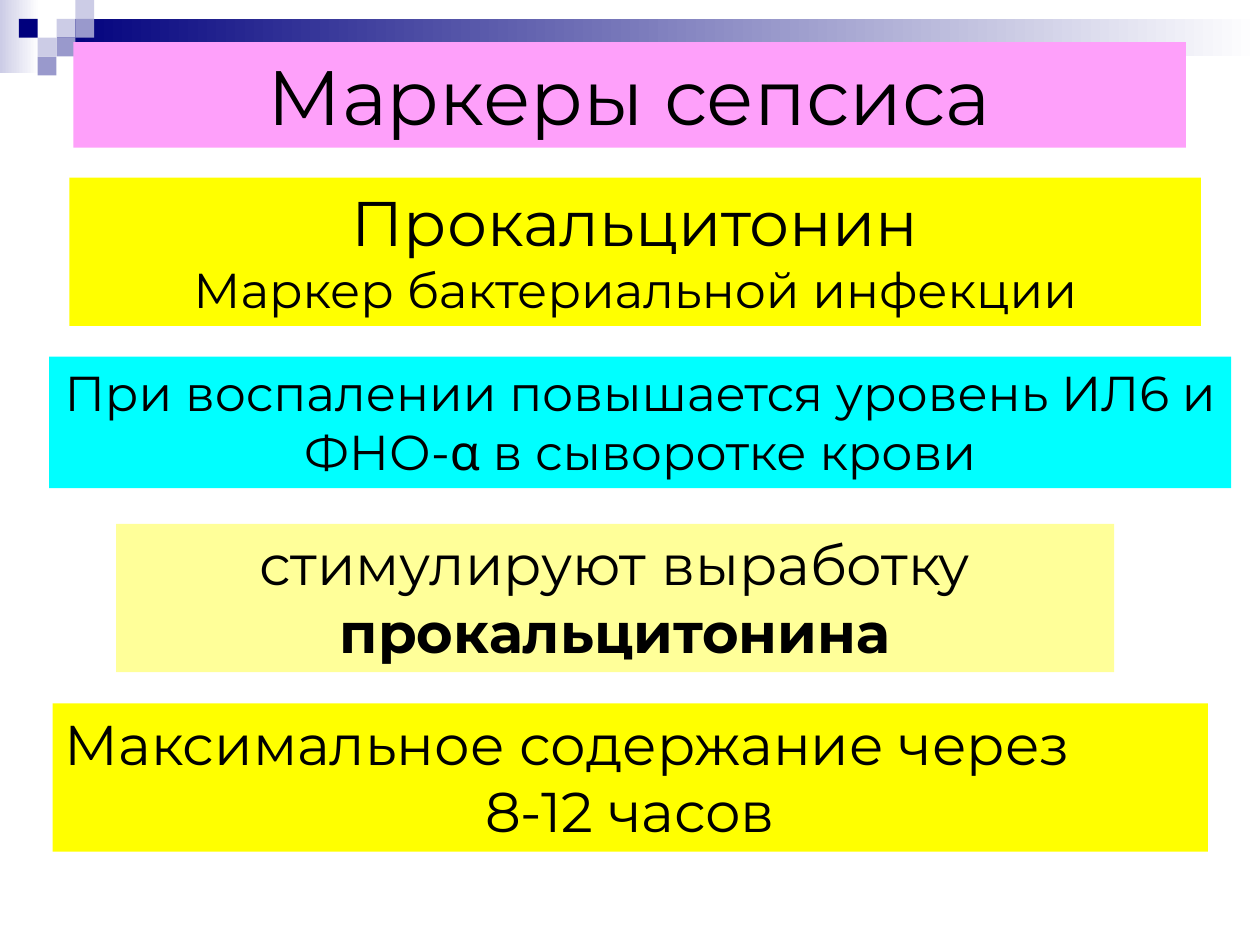
from pptx import Presentation
from pptx.dml.color import RGBColor
from pptx.enum.shapes import MSO_SHAPE
from pptx.enum.text import MSO_ANCHOR, MSO_AUTO_SIZE, PP_ALIGN
from pptx.util import Cm, Pt

RECT = MSO_SHAPE.RECTANGLE
LEFT, CENTER = PP_ALIGN.LEFT, PP_ALIGN.CENTER

BLACK = RGBColor(0x00, 0x00, 0x00)
WHITE = RGBColor(0xFF, 0xFF, 0xFF)
NAVY = RGBColor(0x00, 0x00, 0x7D)
LILAC = RGBColor(0xCC, 0xCC, 0xE6)
VIOLET = RGBColor(0x99, 0x99, 0xCC)
PINK = RGBColor(0xFE, 0xA0, 0xFA)
YELLOW = RGBColor(0xFF, 0xFF, 0x00)
PALE_YELLOW = RGBColor(0xFF, 0xFF, 0x99)
CYAN = RGBColor(0x00, 0xFF, 0xFF)

TILE = 0.38  # side of a corner tile, cm

prs = Presentation()
prs.slide_width, prs.slide_height = Cm(25.4), Cm(19.05)
slide = prs.slides.add_slide(prs.slide_layouts[6])


def add_block(left, top, width, height, color=None):
    block = slide.shapes.add_shape(RECT, Cm(left), Cm(top), Cm(width), Cm(height))
    block.shadow.inherit = False
    block.line.fill.background()
    if color is not None:
        block.fill.solid()
        block.fill.fore_color.rgb = color
    return block


# Fading bands at the top edge
for box, start in [
    ((0, 0, 0.79, 1.47), LILAC),
    ((3 * TILE, TILE, 25.4 - 3 * TILE, 2 * TILE), NAVY),
]:
    band = add_block(*box)
    band.fill.gradient()
    band.fill.gradient_angle = 0
    for stop, color, position in zip(band.fill.gradient_stops, (start, WHITE), (0, 1)):
        stop.color.rgb = color
        stop.position = position

# Corner tiles: column, row, colour
for column, row, color in [
    (3, 1, LILAC), (4, 0, LILAC), (4, 1, VIOLET), (2, 2, LILAC),
    (1, 1, NAVY), (3, 2, VIOLET), (2, 3, VIOLET),
]:
    add_block(column * TILE, row * TILE, TILE, TILE, color)

# Statements: box, fill, paragraphs of (alignment, size, runs of (text, bold))
statements = [
    ((1.4, 3.58, 22.81, 2.99), YELLOW, [
        (CENTER, 36, [("Прокальцитонин", False)]),
        (CENTER, 28, [("Маркер бактериальной инфекции", False)]),
    ]),
    ((0.99, 7.19, 23.83, 2.65), CYAN, [
        (CENTER, 28, [("При воспалении повышается уровень ИЛ6 и ФНО-α в сыворотке крови", False)]),
    ]),
    ((2.34, 10.56, 20.12, 2.99), PALE_YELLOW, [
        (CENTER, 32, [("стимулируют выработку ", False), ("прокальцитонина", True)]),
    ]),
    ((1.06, 14.18, 23.29, 2.99), YELLOW, [
        (LEFT, 32, [("Максимальное содержание через", False)]),
        (CENTER, 32, [("8-12 часов", False)]),
    ]),
    ((1.48, 0.85, 22.43, 2.13), PINK, [
        (CENTER, 44, [("Маркеры сепсиса", False)]),
    ]),
]
frame_format = {
    "word_wrap": True,
    "auto_size": MSO_AUTO_SIZE.SHAPE_TO_FIT_TEXT,
    "vertical_anchor": MSO_ANCHOR.TOP,
}

for box, color, paragraphs in statements:
    frame = add_block(*box, color).text_frame
    for attribute, value in frame_format.items():
        setattr(frame, attribute, value)
    for index, (alignment, size, runs) in enumerate(paragraphs):
        paragraph = frame.add_paragraph() if index else frame.paragraphs[0]
        paragraph.alignment = alignment
        for text, bold in runs:
            run = paragraph.add_run()
            run.text = text
            run.font.color.rgb = BLACK
            for attribute, value in {"name": "Montserrat", "size": Pt(size), "bold": bold}.items():
                setattr(run.font, attribute, value)

prs.save("out.pptx")
